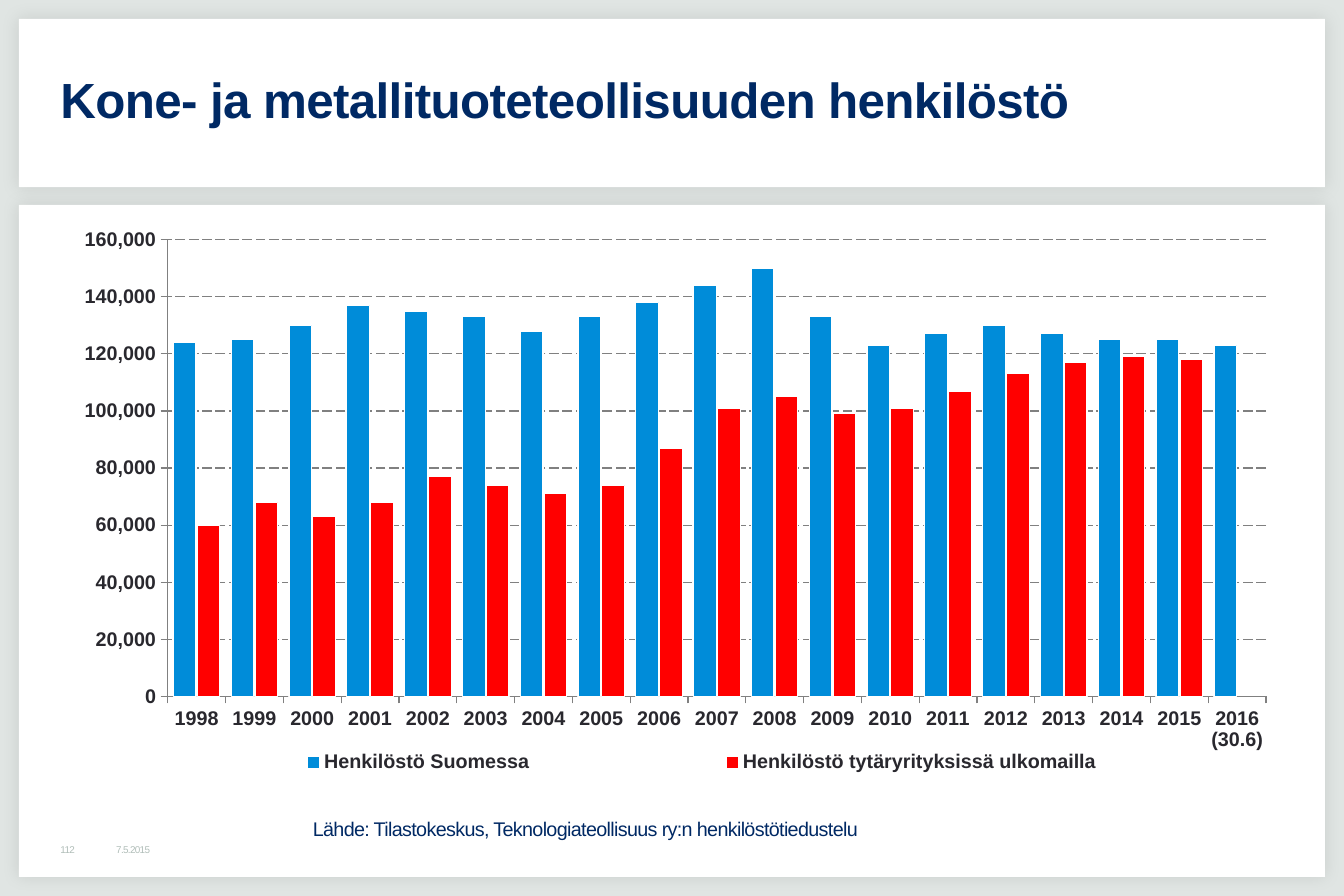
from lxml import etree
from pptx import Presentation
from pptx.chart.data import CategoryChartData
from pptx.dml.color import RGBColor
from pptx.enum.chart import XL_CHART_TYPE, XL_LEGEND_POSITION, XL_TICK_MARK
from pptx.enum.dml import MSO_LINE
from pptx.enum.shapes import MSO_SHAPE
from pptx.enum.text import MSO_ANCHOR, MSO_AUTO_SIZE, PP_ALIGN
from pptx.oxml import parse_xml
from pptx.oxml.ns import nsdecls, qn
from pptx.util import Inches, Pt

BACKGROUND = RGBColor(0xE0, 0xE5, 0xE3)
WHITE = RGBColor(0xFF, 0xFF, 0xFF)
NAVY = RGBColor(0x00, 0x29, 0x64)
BLUE = RGBColor(0x00, 0x8C, 0xD9)
RED = RGBColor(0xFF, 0x00, 0x00)
DARK = RGBColor(0x29, 0x28, 0x2E)
GREY = RGBColor(0x80, 0x80, 0x80)
PALE = RGBColor(0xB1, 0xBE, 0xB9)


def write_text(shape, text, size, color, bold=False, anchor=MSO_ANCHOR.MIDDLE,
               margins=(0.04, 0.04, 0.04, 0.04), spacing=None):
    frame = shape.text_frame
    frame.word_wrap = True
    frame.auto_size = MSO_AUTO_SIZE.NONE
    frame.vertical_anchor = anchor
    (frame.margin_left, frame.margin_top,
     frame.margin_right, frame.margin_bottom) = map(Inches, margins)
    paragraph = frame.paragraphs[0]
    paragraph.alignment = PP_ALIGN.LEFT
    paragraph.line_spacing = spacing
    run = paragraph.add_run()
    run.text = text
    run.font.name = "Arial"
    run.font.size = Pt(size)
    run.font.bold = bold
    run.font.color.rgb = color
    run.font._element.set("spc", "-40")


def set_layout(parent, x, y, width, height, inner=False):
    """Place a chart part by fractions of the chart area."""
    for old in parent.findall(qn("c:layout")):
        parent.remove(old)
    layout = etree.Element(qn("c:layout"))
    manual = etree.SubElement(layout, qn("c:manualLayout"))
    settings = [("layoutTarget", "inner")] if inner else []
    settings += [("xMode", "edge"), ("yMode", "edge"),
                 ("x", x), ("y", y), ("w", width), ("h", height)]
    for name, value in settings:
        etree.SubElement(manual, qn(f"c:{name}")).set("val", str(value))
    # The layout follows the legend position, or opens the plot area
    position = parent.find(qn("c:legendPos"))
    if position is None:
        parent.insert(0, layout)
    else:
        position.addnext(layout)


presentation = Presentation()
presentation.slide_width = Inches(11.34)
presentation.slide_height = Inches(7.56)
slide = presentation.slides.add_slide(presentation.slide_layouts[5])
slide.background.fill.solid()
slide.background.fill.fore_color.rgb = BACKGROUND

# Title
title = slide.shapes.title
title.left, title.top = Inches(0.47), Inches(0.31)
title.width, title.height = Inches(10.4), Inches(1.1)
write_text(title, "Kone- ja metallituoteteollisuuden henkilöstö", 30, NAVY,
           bold=True, margins=(0.04, 0.05, 0.1, 0.05), spacing=0.95)

# White panels with a soft shadow, behind the title
for top, height in ((0.16, 1.42), (1.73, 5.67)):
    panel = slide.shapes.add_shape(MSO_SHAPE.RECTANGLE, Inches(0.16),
                                   Inches(top), Inches(11.02), Inches(height))
    panel.fill.solid()
    panel.fill.fore_color.rgb = WHITE
    panel.line.fill.background()
    panel.shadow.inherit = False
    effects = panel.element.spPr.find(qn("a:effectLst"))
    effects.append(parse_xml(
        f'<a:outerShdw {nsdecls("a")} blurRad="127000" dist="0" dir="2700000" '
        'algn="ctr" rotWithShape="0"><a:srgbClr val="000000">'
        '<a:alpha val="10000"/></a:srgbClr></a:outerShdw>'))
    title.element.addprevious(panel.element)

# Personnel chart
data = CategoryChartData(number_format="#,##0")
data.categories = [str(year) for year in range(1998, 2016)] + ["2016 (30.6)"]
data.add_series("Henkilöstö Suomessa", (
    124000, 125000, 130000, 137000, 135000, 133000, 128000, 133000, 138000,
    144000, 150000, 133000, 123000, 127000, 130000, 127000, 125000, 125000,
    123000))
data.add_series("Henkilöstö tytäryrityksissä ulkomailla", (
    60000, 68000, 63000, 68000, 77000, 74000, 71000, 74000, 87000,
    101000, 105000, 99000, 101000, 107000, 113000, 117000, 119000, 118000,
    None))
chart = slide.shapes.add_chart(
    XL_CHART_TYPE.COLUMN_CLUSTERED, Inches(0.47), Inches(1.89),
    Inches(10.39), Inches(4.73), data).chart
chart.has_title = False
chart.font.name = "Arial"
chart.font.size = Pt(12)
chart.font.bold = True
chart.font.color.rgb = DARK

plot = chart.plots[0]
plot.gap_width = 50
plot.overlap = -5
plot.vary_by_categories = False
for series, color in zip(plot.series, (BLUE, RED)):
    series.format.fill.solid()
    series.format.fill.fore_color.rgb = color
    series.format.line.color.rgb = WHITE
    series.format.line.width = Pt(0.75)

# Axes and gridlines
values = chart.value_axis
values.minimum_scale = 0
values.maximum_scale = 160000
values.major_unit = 20000
values.tick_labels.number_format = "#,##0"
values.tick_labels.number_format_is_linked = False
values.has_major_gridlines = True
for axis in (chart.category_axis, values):
    axis.major_tick_mark = XL_TICK_MARK.OUTSIDE
    axis.minor_tick_mark = XL_TICK_MARK.NONE
    axis.format.line.color.rgb = GREY
    axis.format.line.width = Pt(0.75)
gridline = values.major_gridlines.format.line
gridline.color.rgb = GREY
gridline.width = Pt(0.75)
gridline.dash_style = MSO_LINE.LONG_DASH

# Legend and plot positions
chart.has_legend = True
chart.legend.position = XL_LEGEND_POSITION.BOTTOM
chart.legend.include_in_layout = False
chart.legend.font.size = Pt(12)
chart.legend.font.bold = True
plot_area = chart.element.find(f".//{qn('c:plotArea')}")
legend_element = chart.element.find(f".//{qn('c:legend')}")
set_layout(plot_area, 0.091, 0.028, 0.892, 0.815, inner=True)
set_layout(legend_element, 0.05, 0.93, 0.95, 0.06)

# Source line, page number and date
for text, left, top, width, height, size, color, anchor in (
        ("Lähde: Tilastokeskus, Teknologiateollisuus ry:n henkilöstötiedustelu",
         2.6, 6.85, 5.67, 0.28, 12, NAVY, MSO_ANCHOR.TOP),
        ("112", 0.47, 7.09, 0.47, 0.16, 6, PALE, MSO_ANCHOR.MIDDLE),
        ("7.5.2015", 0.94, 7.09, 1.42, 0.16, 6, PALE, MSO_ANCHOR.MIDDLE)):
    box = slide.shapes.add_textbox(Inches(left), Inches(top),
                                   Inches(width), Inches(height))
    write_text(box, text, size, color, anchor=anchor)

presentation.save("out.pptx")
